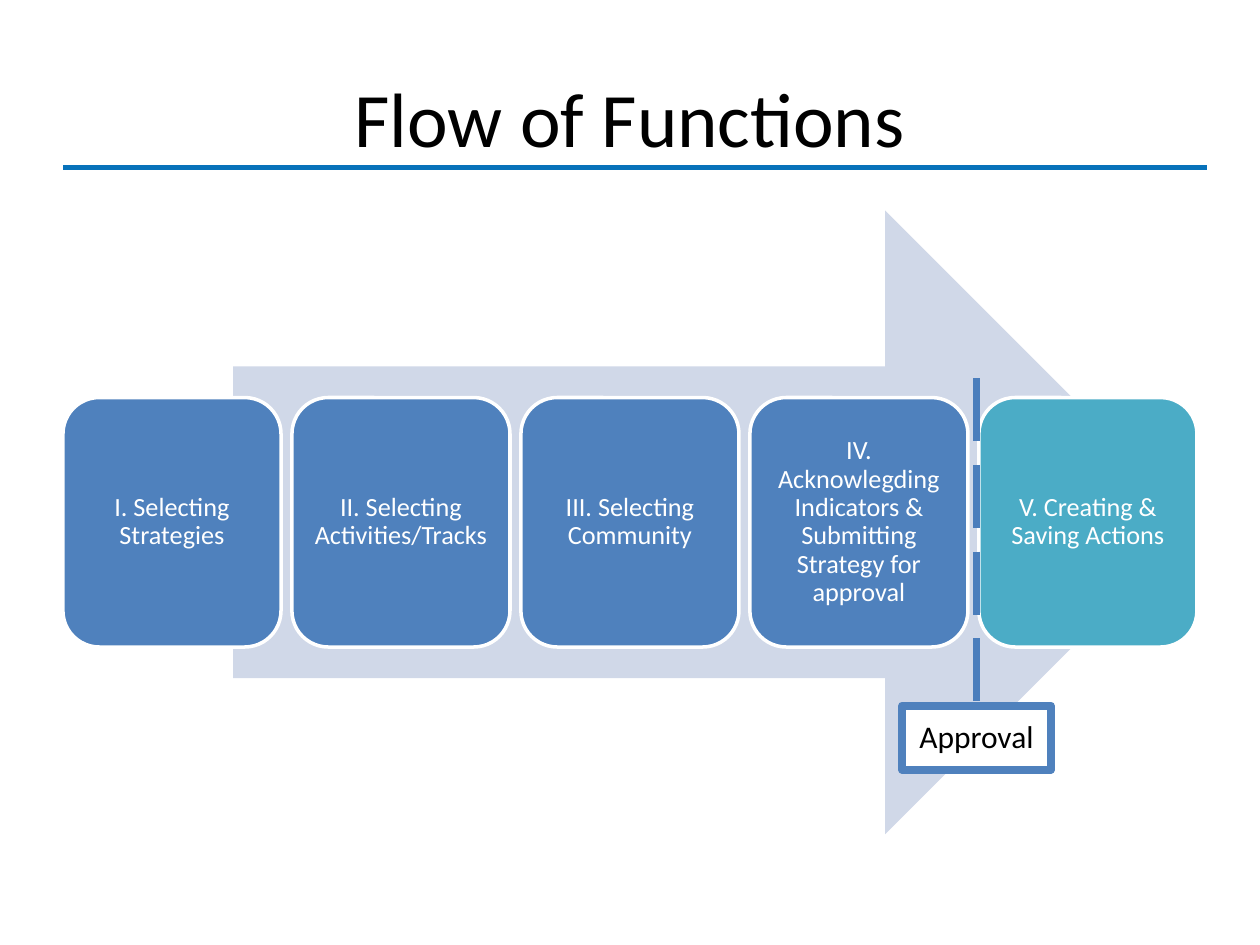
from lxml import etree
from pptx import Presentation
from pptx import util as u
from pptx.dml.color import RGBColor
from pptx.enum import dml, shapes, text
from pptx.oxml import ns

BLACK = RGBColor(0x00, 0x00, 0x00)
WHITE = RGBColor(0xFF, 0xFF, 0xFF)
RULE_BLUE = RGBColor(0x07, 0x72, 0xBA)
ARROW_TINT = RGBColor(0xD0, 0xD8, 0xE8)
STEP_BLUE = RGBColor(0x4F, 0x81, 0xBD)
STEP_TEAL = RGBColor(0x4B, 0xAC, 0xC6)
GATE_BLUE = RGBColor(0x4B, 0x7E, 0xBC)

FONT = "Calibri"
WIDTH, HEIGHT = u.Inches(10), u.Inches(7.5)
STEPS = [
    ("I. Selecting Strategies", STEP_BLUE),
    ("II. Selecting Activities/Tracks", STEP_BLUE),
    ("III. Selecting Community", STEP_BLUE),
    ("IV. Acknowlegding Indicators & Submitting Strategy for approval", STEP_BLUE),
    ("V. Creating & Saving Actions", STEP_TEAL),
]


def inches(*lengths):
    return [u.Inches(length) for length in lengths]


def write(holder, words, size, color, anchor, spacing=1.0):
    frame = holder.text_frame
    frame.word_wrap = True
    frame.vertical_anchor = anchor
    paragraph = frame.paragraphs[0]
    paragraph.alignment = text.PP_ALIGN.CENTER
    paragraph.line_spacing = spacing
    run = paragraph.add_run()
    run.text = words
    run.font.name, run.font.size = FONT, u.Pt(size)
    run.font.color.rgb = color
    return frame


def add_block(slide, kind, box, fill, line=None, weight=0):
    block = slide.shapes.add_shape(kind, *box)
    block.shadow.inherit = False
    block.fill.solid()
    block.fill.fore_color.rgb = fill
    if line is None:
        block.line.fill.background()
    else:
        block.line.color.rgb = line
        block.line.width = u.Pt(weight)
    return block


def add_line(slide, start, end, color, weight):
    line = slide.shapes.add_connector(shapes.MSO_CONNECTOR.STRAIGHT, *start, *end)
    line.line.color.rgb = color
    line.line.width = u.Pt(weight)
    etree.SubElement(line._element.spPr, ns.qn("a:effectLst"))
    return line


def add_heading(slide, box):
    left, top, width, height = box
    rule_y = top + int(height * 0.824)
    add_line(slide, (left, rule_y), (left + u.Inches(9.08), rule_y), RULE_BLUE, 3)
    title = slide.shapes.add_textbox(*box)
    write(title, "Flow of Functions", 44, BLACK, text.MSO_ANCHOR.MIDDLE)


def add_flow(slide, box):
    left, top, width, height = box

    # Arrow behind the steps, flush with the right edge
    arrow_width = int(width * 0.85)
    arrow_box = (left + width - arrow_width, top, arrow_width, height)
    add_block(slide, shapes.MSO_SHAPE.RIGHT_ARROW, arrow_box, ARROW_TINT)

    # Equal steps, with a gap of one twentieth of a step
    step_width = width / (len(STEPS) + 0.05 * (len(STEPS) - 1))
    step_height = int(height * 0.4)
    step_top = top + (height - step_height) // 2
    for index, (words, fill) in enumerate(STEPS):
        step_left = left + int(index * step_width * 1.05)
        step = add_block(slide, shapes.MSO_SHAPE.ROUNDED_RECTANGLE,
                         (step_left, step_top, int(step_width), step_height),
                         fill, WHITE, 2)
        frame = write(step, words, 15, WHITE, text.MSO_ANCHOR.MIDDLE, 0.9)
        frame.margin_left = frame.margin_right = u.Inches(0.06)
        frame.margin_top = frame.margin_bottom = u.Inches(0.06)


def add_approval_gate(slide, box):
    left, top, width, height = box
    label_height = u.Inches(0.51)
    label_top = top + height - label_height
    middle = left + width // 2

    # Dashed line running down into the label
    gate = add_line(slide, (middle, top), (middle, label_top), GATE_BLUE, 4.5)
    gate.line.dash_style = dml.MSO_LINE.LONG_DASH

    label = add_block(slide, shapes.MSO_SHAPE.RECTANGLE,
                      (left, label_top, width, label_height), WHITE, STEP_BLUE, 4.5)
    write(label, "Approval", 18, BLACK, text.MSO_ANCHOR.TOP, 1.15)
    gate.end_connect(label, 0)


def main():
    deck = Presentation()
    deck.slide_width, deck.slide_height = WIDTH, HEIGHT
    slide = deck.slides.add_slide(deck.slide_layouts[6])
    add_heading(slide, inches(0.5, 0.3, 9, 1.25))
    add_flow(slide, inches(0.5, 1.67, 9, 4.95))
    add_approval_gate(slide, inches(7.16, 3, 1.18, 3.11))
    deck.save("out.pptx")


if __name__ == "__main__":
    main()
